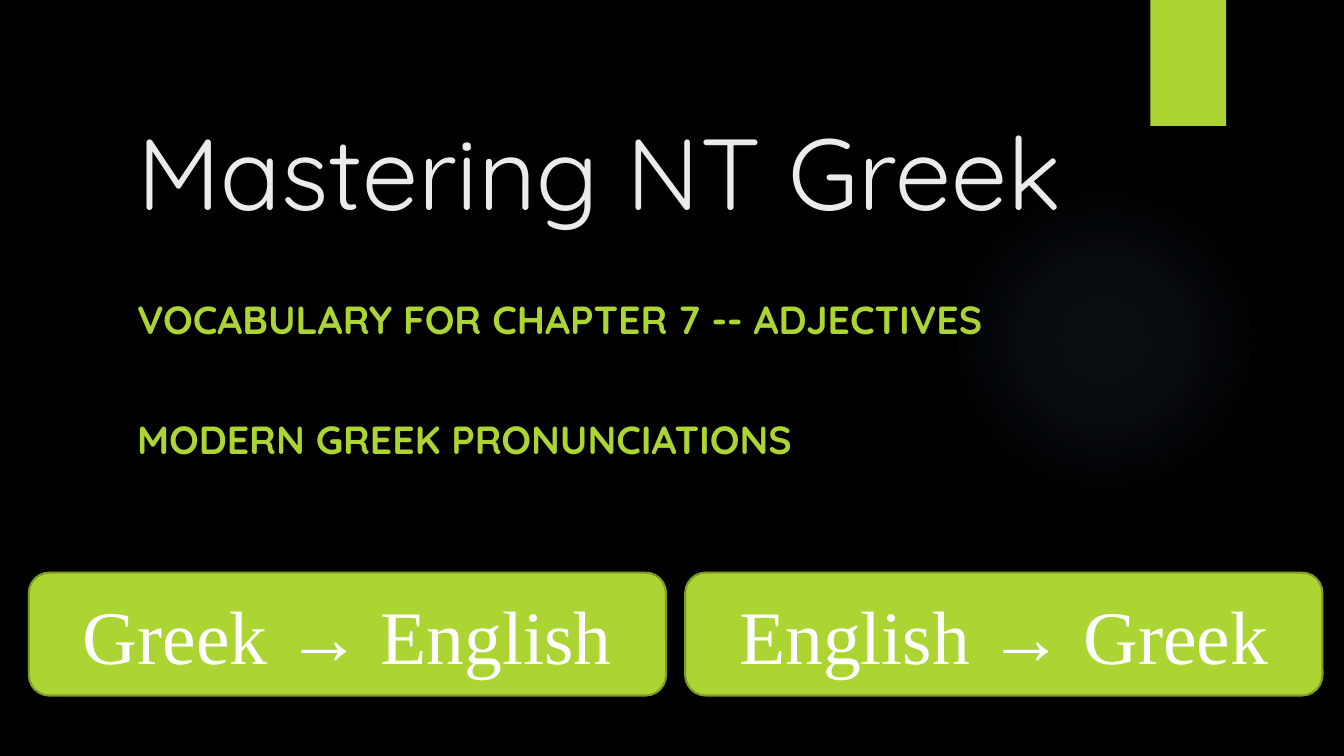
from dataclasses import dataclass

from lxml import etree
from pptx import Presentation
from pptx.dml.color import RGBColor
from pptx.enum.shapes import MSO_SHAPE as Shape
from pptx.enum.text import MSO_ANCHOR as Anchor, MSO_AUTO_SIZE as AutoSize, PP_ALIGN as Align
from pptx.oxml import parse_xml
from pptx.oxml.ns import nsdecls, qn
from pptx.util import Pt


@dataclass(frozen=True)
class Theme:
    background: str = "000000"
    accent: str = "ACD433"
    accent_edge: str = "7F9D26"
    glow: str = "7AC4F0"
    title_text: str = "EBEBEB"
    button_text: str = "FFFFFF"
    heading_font: str = "Quicksand"
    button_font: str = "Times New Roman"
    title_size: int = 72
    subtitle_size: int = 28
    button_size: int = 54


THEME = Theme()


def rgb(color):
    return RGBColor.from_string(color)


def place(part, box):
    part.left, part.top, part.width, part.height = map(Pt, box)


def add_run(paragraph, text, font_name, size, color, bold=False):
    run = paragraph.add_run()
    run.text = text
    font = run.font
    font.name, font.size, font.bold = font_name, Pt(size), bold
    font.color.rgb = rgb(color)


def add_filled(slide, kind, box, color):
    part = slide.shapes.add_shape(kind, *map(Pt, box))
    part.shadow.inherit = False
    part.fill.solid()
    part.fill.fore_color.rgb = rgb(color)
    part.line.fill.background()
    return part


def add_glow(slide, box):
    """Radial glow that fades out towards its rim."""
    glow = add_filled(slide, Shape.OVAL, box, THEME.glow)
    stops = "".join(
        f'<a:gs pos="{position * 1000}"><a:srgbClr val="{THEME.glow}">'
        f'<a:alpha val="{alpha * 1000}"/></a:srgbClr></a:gs>'
        for position, alpha in ((0, 7), (36, 6), (69, 0), (100, 0))
    )
    gradient = parse_xml(
        f'<a:gradFill {nsdecls("a")} rotWithShape="1"><a:gsLst>{stops}</a:gsLst>'
        '<a:path path="circle"><a:fillToRect l="50000" t="50000" r="50000" b="50000"/>'
        '</a:path></a:gradFill>'
    )
    properties = glow.element.spPr
    properties.replace(properties.find(qn("a:solidFill")), gradient)


def fill_title(title, box, text):
    place(title, box)
    frame = title.text_frame
    frame.auto_size = AutoSize.NONE
    frame.word_wrap = True
    frame.vertical_anchor = Anchor.BOTTOM
    frame.margin_bottom = 0
    paragraph = frame.paragraphs[0]
    paragraph.alignment = Align.LEFT
    add_run(paragraph, text, THEME.heading_font, THEME.title_size, THEME.title_text)


def fill_subtitle(subtitle, box, lines):
    place(subtitle, box)
    frame = subtitle.text_frame
    frame.auto_size = AutoSize.NONE
    frame.word_wrap = True
    frame.vertical_anchor = Anchor.TOP
    for index, line in enumerate(lines):
        paragraph = frame.add_paragraph() if index else frame.paragraphs[0]
        paragraph.alignment = Align.LEFT
        paragraph.space_before = Pt(52 if index else 0)
        add_run(paragraph, line, THEME.heading_font, THEME.subtitle_size, THEME.accent, True)


def add_buttons(slide, box, labels, gap=13.7):
    """Row of equally wide buttons across the box."""
    left, top, width, height = box
    button_width = (width - gap * (len(labels) - 1)) / len(labels)
    for index, label in enumerate(labels):
        button_left = left + index * (button_width + gap)
        button = add_filled(slide, Shape.ROUNDED_RECTANGLE,
                            (button_left, top, button_width, height), THEME.accent)
        button.line.color.rgb = rgb(THEME.accent_edge)
        button.line.width = Pt(1.5)
        frame = button.text_frame
        frame.word_wrap = True
        frame.vertical_anchor = Anchor.MIDDLE
        paragraph = frame.paragraphs[0]
        paragraph.alignment = Align.CENTER
        add_run(paragraph, label, THEME.button_font, THEME.button_size, THEME.button_text)


def build_cover(deck):
    slide = deck.slides.add_slide(deck.slide_layouts[0])
    background = slide.background.fill
    background.solid()
    background.fore_color.rgb = rgb(THEME.background)
    add_glow(slide, (677.5, 131.8, 221.8, 221.8))
    add_filled(slide, Shape.RECTANGLE, (821.8, 0, 54, 90), THEME.accent)
    title, subtitle = slide.placeholders
    fill_title(title, (90.7, 50.4, 722.9, 114.5), "Mastering NT Greek")
    fill_subtitle(subtitle, (90.7, 207.4, 751, 193.7),
                  ("VOCABULARY FOR CHAPTER 7 -- ADJECTIVES", "MODERN GREEK PRONUNCIATIONS"))
    add_buttons(slide, (20.6, 409, 924, 87.8), ("Greek → English", "English → Greek"))


def main():
    deck = Presentation()
    deck.slide_width, deck.slide_height = Pt(960), Pt(540)
    build_cover(deck)
    deck.save("out.pptx")


if __name__ == "__main__":
    main()
